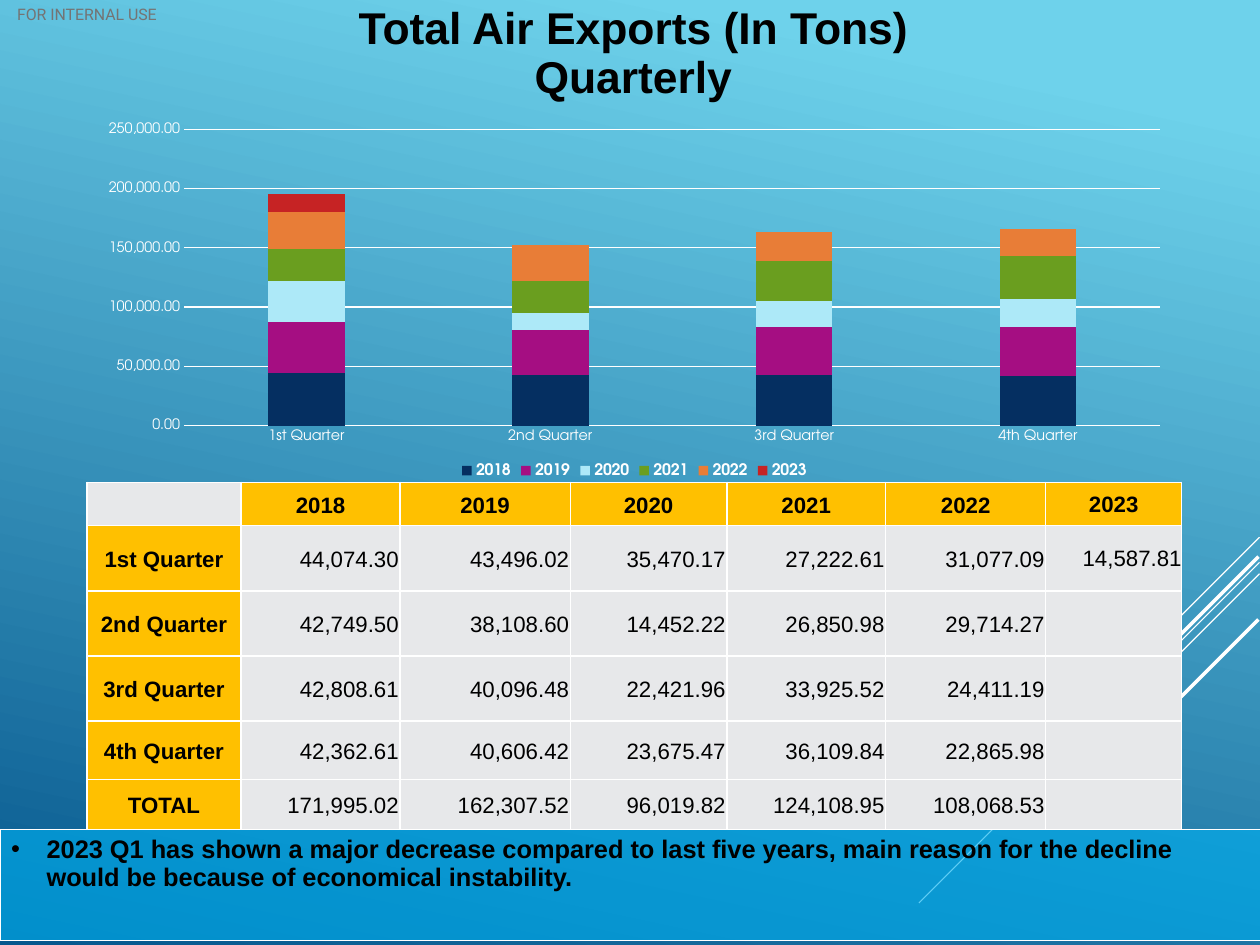
from dataclasses import dataclass

from lxml.etree import SubElement
from pptx import Presentation
from pptx.chart.data import CategoryChartData
from pptx.dml.color import RGBColor
from pptx.enum.chart import XL_CHART_TYPE as CT, XL_LEGEND_POSITION as LP, XL_TICK_MARK as TM
from pptx.enum.shapes import MSO_CONNECTOR as MC, MSO_SHAPE as MS
from pptx.enum.text import MSO_ANCHOR as MA, MSO_AUTO_SIZE as AS, PP_ALIGN as PA
from pptx.oxml import parse_xml
from pptx.oxml.ns import nsdecls, qn
from pptx.util import Cm, Inches, Pt

TITLE = ["Total Air Exports (In Tons)", "Quarterly"]
LABEL = "FOR INTERNAL USE"
NOTE = ("2023 Q1 has shown a major decrease compared to last five years, "
        "main reason for the decline would be because of economical instability.")
QUARTERS = ["1st Quarter", "2nd Quarter", "3rd Quarter", "4th Quarter"]
TONS = {
    "2018": [44074.30, 42749.50, 42808.61, 42362.61],
    "2019": [43496.02, 38108.60, 40096.48, 40606.42],
    "2020": [35470.17, 14452.22, 22421.96, 23675.47],
    "2021": [27222.61, 26850.98, 33925.52, 36109.84],
    "2022": [31077.09, 29714.27, 24411.19, 22865.98],
    "2023": [14587.81, None, None, None],
}
COL_WIDTHS = [1.35, 1.39, 1.49, 1.37, 1.39, 1.4, 1.19]
ROW_HEIGHTS = [0.38, 0.57, 0.57, 0.57, 0.51, 0.44]
RAYS = [
    (11.02, 4.7, 0.91, 0.75),
    (11.02, 4.92, 2.98, 0.75),
    (11.02, 5.02, 1.89, 0.75),
    (11.01, 4.87, 1.73, 2.25),
    (11.01, 5.42, 1.26, 2.25),
]


@dataclass(frozen=True)
class Theme:
    sky: str = "6ED2EB"
    sea: str = "06588E"
    white: str = "FFFFFF"
    black: str = "000000"
    label: str = "747474"
    strip: str = "00B0F0"
    head: str = "FFC000"
    body: str = "E7E8EA"
    series: tuple = ("052F61", "A50E82", "ADE9F8", "6A9E1F", "E87D37", "C62324")
    text_font: str = "Arial"
    label_font: str = "Roboto"
    chart_font: str = "TeX Gyre Adventor"
    title_pt: int = 28
    note_pt: int = 16
    cell_pt: int = 14
    small_pt: int = 10
    axis_pt: int = 9


T = Theme()


def rgb(color):
    return RGBColor.from_string(color)


def apply(obj, **values):
    for name, value in values.items():
        setattr(obj, name, value)


def set_font(font, size, color, name=T.text_font, bold=False):
    apply(font, size=Pt(size), name=name, bold=bold)
    font.color.rgb = rgb(color)


def set_line(line, color, width):
    line.color.rgb = rgb(color)
    line.width = Pt(width)


def box(x, y, w, h):
    return [Inches(v) for v in (x, y, w, h)]


def margins(obj, left, top, right, bottom):
    apply(obj, margin_left=Inches(left), margin_top=Inches(top),
          margin_right=Inches(right), margin_bottom=Inches(bottom))


def write(tf, lines, align, spacing, after=0, **font):
    for i, line in enumerate(lines):
        p = tf.add_paragraph() if i else tf.paragraphs[0]
        apply(p, alignment=align, line_spacing=spacing, space_before=Pt(0), space_after=Pt(after))
        r = p.add_run()
        r.text = line
        set_font(r.font, **font)


def add_rays(s):
    for x, y, reach, width in RAYS:
        ray = s.shapes.add_connector(MC.STRAIGHT, *box(x, y, x - reach, y + reach))
        set_line(ray.line, T.white, width)
        SubElement(ray._element.spPr, qn("a:effectLst"))


def add_heading(s):
    label = s.shapes.add_textbox(*box(0, 0, 1.52, 0.26))
    tf = label.text_frame
    margins(tf, 0, 0, 0, 0)
    apply(tf, word_wrap=True, vertical_anchor=MA.MIDDLE)
    write(tf, [LABEL], PA.CENTER, 0.93, size=T.small_pt, color=T.label, name=T.label_font)
    title = s.shapes.title
    left, top, width, height = box(0.58, 0, 9.92, 0.92)
    apply(title, left=left, top=top, width=width, height=height)
    tf = title.text_frame
    margins(tf, 0, 0.03, 0, 0)
    apply(tf, word_wrap=True, auto_size=AS.NONE, vertical_anchor=MA.MIDDLE)
    write(tf, TITLE, PA.CENTER, 0.93, size=T.title_pt, color=T.black, bold=True)


def add_note(s):
    sp = s.shapes.add_shape(MS.RECTANGLE, *box(0, 7.26, 11.06, 0.97))
    sp.shadow.inherit = False
    sp.fill.solid()
    sp.fill.fore_color.rgb = rgb(T.strip)
    color = sp._element.spPr.find(qn("a:solidFill"))[0]
    SubElement(color, qn("a:alpha"), val="63000")
    set_line(sp.line, T.white, 0.75)
    tf = sp.text_frame
    apply(tf, word_wrap=True, vertical_anchor=MA.TOP)
    write(tf, [NOTE], PA.LEFT, 0.93, size=T.note_pt, color=T.black, bold=True)
    pPr = tf.paragraphs[0]._p.get_or_add_pPr()
    pPr.set("marL", str(Inches(0.31)))
    pPr.set("indent", str(-Inches(0.31)))
    SubElement(SubElement(pPr, qn("a:buClr")), qn("a:srgbClr"), val=T.black)
    SubElement(pPr, qn("a:buFont"), typeface=T.text_font)
    SubElement(pPr, qn("a:buChar"), char="•")


def table_rows():
    totals = [None if None in tons else sum(tons) for tons in TONS.values()]
    numbers = [*zip(*TONS.values()), totals]
    yield ["", *TONS]
    for name, values in zip([*QUARTERS, "TOTAL"], numbers):
        yield [name, *("" if v is None else f"{v:,.2f}" for v in values)]


def add_borders(cell):
    tcPr = cell._tc.get_or_add_tcPr()
    for i, side in enumerate("LRTB"):
        tcPr.insert(i, parse_xml(
            f'<a:ln{side} {nsdecls("a")} w="12700"><a:solidFill>'
            f'<a:srgbClr val="{T.white}"/></a:solidFill></a:ln{side}>'))


def add_tons_table(s):
    shape = s.shapes.add_table(len(ROW_HEIGHTS), len(COL_WIDTHS), *box(0.76, 4.22, 9.58, 3.04))
    table = shape.table
    apply(table, first_row=False, horz_banding=False)
    for col, width in zip(table.columns, COL_WIDTHS):
        col.width = Inches(width)
    for row, height in zip(table.rows, ROW_HEIGHTS):
        row.height = Inches(height)
    for i, texts in enumerate(table_rows()):
        for j, text in enumerate(texts):
            cell = table.cell(i, j)
            head = (i == 0) != (j == 0)
            pad = 0 if j == len(TONS) else 0.01
            margins(cell, pad, pad, pad, 0)
            cell.vertical_anchor = MA.MIDDLE
            cell.fill.solid()
            cell.fill.fore_color.rgb = rgb(T.head if head else T.body)
            add_borders(cell)
            if text:
                write(cell.text_frame, [text], PA.CENTER if head else PA.RIGHT, 1.07, after=8,
                      size=T.cell_pt, color=T.black, bold=head)


def add_tons_chart(s):
    data = CategoryChartData(number_format="#,##0.00")
    data.categories = QUARTERS
    for year, tons in TONS.items():
        data.add_series(year, [v and round(v, -3) for v in tons])
    chart = s.shapes.add_chart(CT.COLUMN_STACKED, *box(0.76, 1.01, 9.58, 3.21), data).chart
    apply(chart, has_title=False, has_legend=True)
    set_font(chart.font, T.small_pt, T.white, T.chart_font)
    apply(chart.legend, position=LP.BOTTOM, include_in_layout=False)
    set_font(chart.legend.font, T.small_pt, T.white, T.chart_font, bold=True)
    plot = chart.plots[0]
    apply(plot, gap_width=219, overlap=100, vary_by_categories=False)
    for series, color in zip(plot.series, T.series):
        series.format.fill.solid()
        series.format.fill.fore_color.rgb = rgb(color)
    cat, val = chart.category_axis, chart.value_axis
    for axis in (cat, val):
        apply(axis, major_tick_mark=TM.NONE, minor_tick_mark=TM.NONE)
        set_font(axis.tick_labels.font, T.axis_pt, T.white, T.chart_font)
    set_line(cat.format.line, T.white, 0.75)
    apply(val, minimum_scale=0, maximum_scale=250000, major_unit=50000, has_major_gridlines=True)
    apply(val.tick_labels, number_format="#,##0.00", number_format_is_linked=False)
    val.format.line.fill.background()
    set_line(val.major_gridlines.format.line, T.white, 0.75)


def main():
    prs = Presentation()
    apply(prs, slide_width=Cm(28), slide_height=Cm(21))
    s = prs.slides.add_slide(prs.slide_layouts[5])
    fill = s.background.fill
    fill.gradient()
    fill.gradient_angle = 360 - 102
    for stop, color, position in zip(fill.gradient_stops, (T.sky, T.sea), (0.1, 1)):
        stop.color.rgb = rgb(color)
        stop.position = position
    for add in (add_rays, add_heading, add_note, add_tons_table, add_tons_chart):
        add(s)
    prs.save("out.pptx")


if __name__ == "__main__":
    main()
